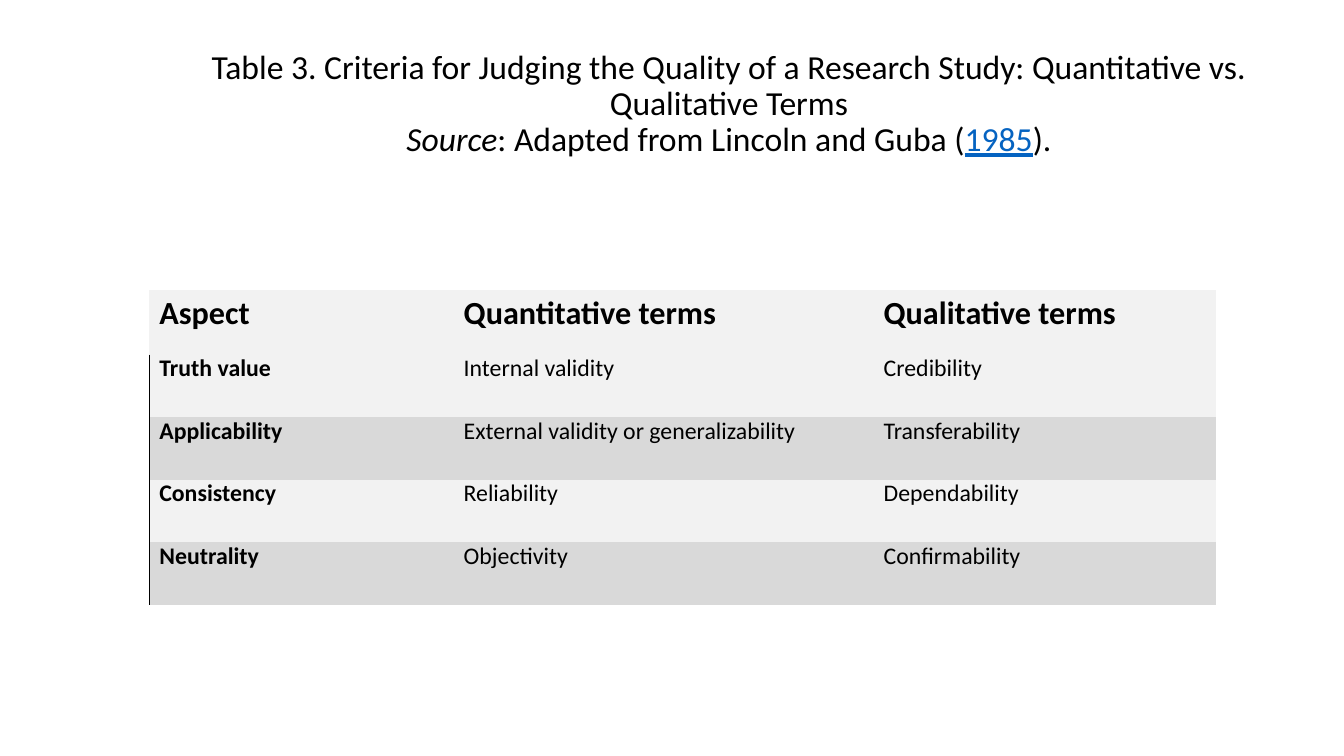
from lxml.etree import fromstring
from pptx import Presentation
from pptx.dml.color import RGBColor
from pptx.enum.text import MSO_ANCHOR, PP_ALIGN
from pptx.oxml.ns import nsdecls
from pptx.util import Pt

BLACK = RGBColor(0x00, 0x00, 0x00)
LINK_BLUE = RGBColor(0x05, 0x63, 0xC1)
LIGHT = RGBColor(0xF2, 0xF2, 0xF2)
GREY = RGBColor(0xD9, 0xD9, 0xD9)

COLUMNS = [217.4, 300, 244.6]
HEADER_HEIGHT, ROW_HEIGHT = 46.6, 44.7
CRITERIA = [
    ("Aspect", "Quantitative terms", "Qualitative terms"),
    ("Truth value", "Internal validity", "Credibility"),
    ("Applicability", "External validity or generalizability", "Transferability"),
    ("Consistency", "Reliability", "Dependability"),
    ("Neutrality", "Objectivity", "Confirmability"),
]


def add_run(p, text, size=24, color=BLACK, bold=False, italic=False, underline=False):
    r = p.add_run()
    r.text = text
    f = r.font
    f.name, f.size, f.color.rgb = "Calibri", Pt(size), color
    f.bold, f.italic, f.underline = bold, italic, underline


def set_borders(cell, left_line):
    """Clear every edge, with an optional thin black line on the left."""
    for i, side in enumerate("LRTB"):
        if side == "L" and left_line:
            width, fill = Pt(1), f'<a:solidFill><a:srgbClr val="{BLACK}"/></a:solidFill>'
        else:
            width, fill = 0, "<a:noFill/>"
        line = fromstring(f'<a:ln{side} {nsdecls("a")} w="{width}">{fill}</a:ln{side}>')
        cell._tc.get_or_add_tcPr().insert(i, line)


def add_title(s, left, top, width, height):
    tf = s.shapes.add_textbox(Pt(left), Pt(top), Pt(width), Pt(height)).text_frame
    tf.word_wrap = True
    tf.vertical_anchor = MSO_ANCHOR.MIDDLE
    tf.margin_bottom = Pt(30)  # lifts the text above the middle of the box
    caption, source = tf.paragraphs[0], tf.add_paragraph()
    for p in (caption, source):
        p.alignment = PP_ALIGN.CENTER
        p.line_spacing = 0.9
    add_run(caption, "Table 3.\u00a0Criteria for Judging the Quality of a Research Study: "
                     "Quantitative vs. Qualitative Terms")
    add_run(source, "Source", italic=True)
    add_run(source, ": Adapted from Lincoln and Guba (")
    add_run(source, "1985", color=LINK_BLUE, underline=True)
    add_run(source, ").")


def add_criteria_table(s, left, top):
    height = HEADER_HEIGHT + ROW_HEIGHT * (len(CRITERIA) - 1)
    table = s.shapes.add_table(len(CRITERIA), len(COLUMNS), Pt(left), Pt(top),
                               Pt(sum(COLUMNS)), Pt(height)).table
    table.first_row = table.horz_banding = False
    for column, width in zip(table.columns, COLUMNS):
        column.width = Pt(width)
    for i, texts in enumerate(CRITERIA):
        header = i == 0
        table.rows[i].height = Pt(HEADER_HEIGHT if header else ROW_HEIGHT)
        for j, text in enumerate(texts):
            cell = table.cell(i, j)
            cell.fill.solid()
            cell.fill.fore_color.rgb = GREY if i and i % 2 == 0 else LIGHT
            set_borders(cell, left_line=j == 0 and not header)
            cell.vertical_anchor = MSO_ANCHOR.BOTTOM if header else MSO_ANCHOR.TOP
            cell.margin_left, cell.margin_top = Pt(7.2), Pt(2.2)
            cell.margin_right, cell.margin_bottom = Pt(8.6 if header else 13), Pt(15)
            p = cell.text_frame.paragraphs[0]
            p.line_spacing, p.space_after = Pt(18), Pt(11.2)
            add_run(p, text, size=23 if header else 17, bold=header or j == 0)


def main():
    prs = Presentation()
    prs.slide_width, prs.slide_height = Pt(960), Pt(540)
    s = prs.slides.add_slide(prs.slide_layouts[6])
    add_title(s, 139.7, 43.2, 762, 89.3)
    add_criteria_table(s, 106.6, 206.8)
    prs.save("out.pptx")


if __name__ == "__main__":
    main()
